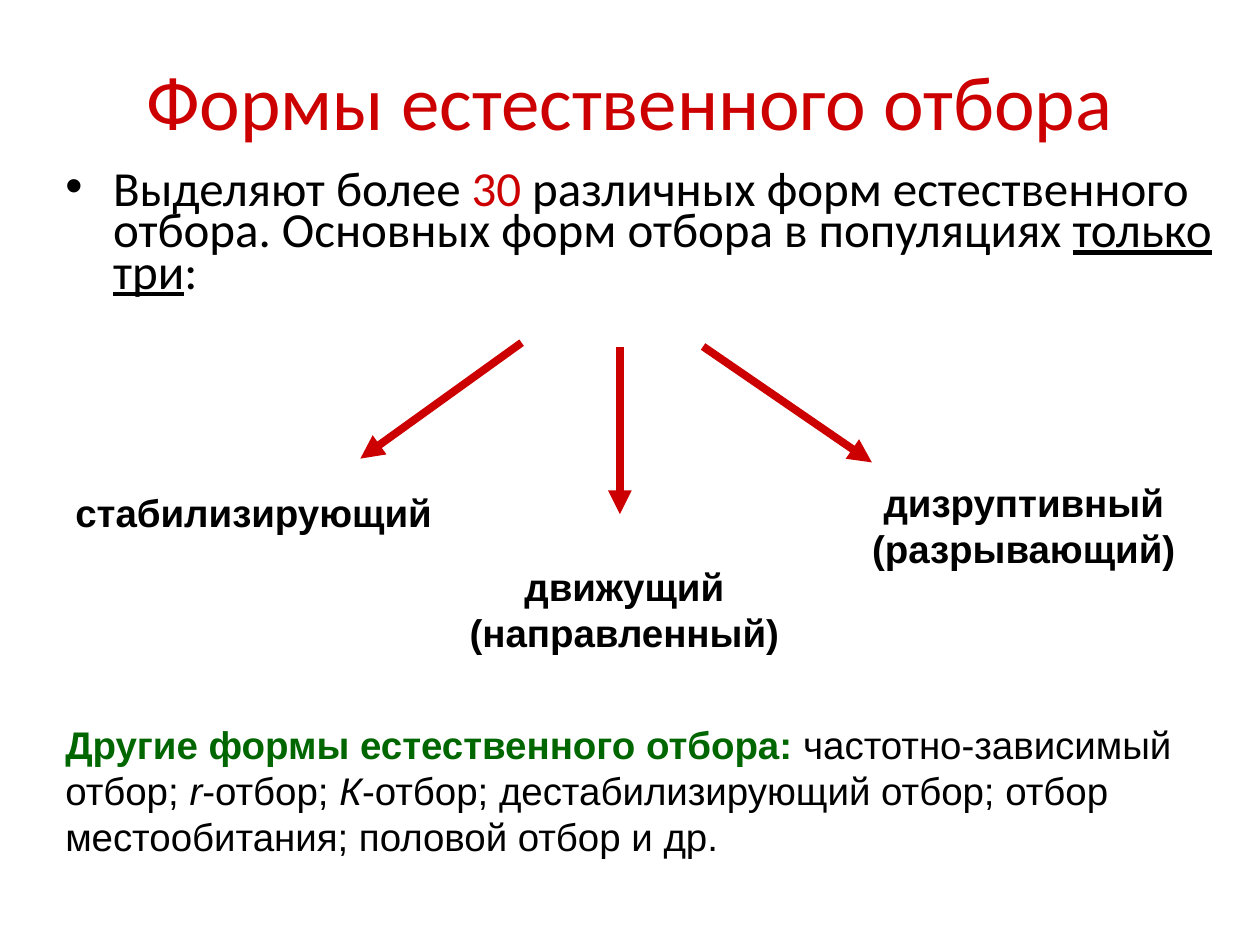
from lxml import etree
from pptx import Presentation
from pptx.dml.color import RGBColor
from pptx.enum.shapes import MSO_CONNECTOR
from pptx.enum.text import MSO_ANCHOR, PP_ALIGN
from pptx.oxml.ns import qn
from pptx.util import Inches, Pt

RED = RGBColor(0xCC, 0x00, 0x00)
GREEN = RGBColor(0x00, 0x66, 0x00)
BLACK = RGBColor(0x00, 0x00, 0x00)

# Runs are (text, font settings that differ from the base style)
TITLE = [("Формы естественного отбора", {})]
INTRO = [
    ("Выделяют более ", {}),
    ("30", {"color": RED}),
    (" различных форм естественного отбора. Основных форм отбора в популяциях ", {}),
    ("только три", {"underline": True}),
    (":", {}),
]
OTHER_FORMS = [
    ("Другие формы естественного отбора:", {"bold": True, "color": GREEN}),
    (" частотно-зависимый отбор; ", {}),
    ("r", {"italic": True}),
    ("-отбор; ", {}),
    ("К", {"italic": True}),
    ("-отбор; дестабилизирующий отбор; отбор местообитания; половой отбор и др.", {}),
]
# Label, its box, its alignment, arrow start, arrow end
MAIN_FORMS = [
    ("стабилизирующий", (0.5, 3.83, 3.08, 0.47), PP_ALIGN.LEFT, (4.14, 2.72), (2.86, 3.64)),
    ("движущий (направленный)", (3.58, 4.42, 2.75, 0.83), PP_ALIGN.CENTER,
     (4.92, 2.75), (4.92, 4.08)),
    ("дизруптивный (разрывающий)", (6.75, 3.75, 2.75, 0.83), PP_ALIGN.CENTER,
     (5.58, 2.75), (6.92, 3.67)),
]

TITLE_FONT = {"name": "Calibri", "size": Pt(44), "color": RED}
INTRO_FONT = {"name": "Calibri", "size": Pt(28), "color": BLACK}
NOTE_FONT = {"name": "Arial", "size": Pt(22), "color": BLACK}
LABEL_FONT = NOTE_FONT | {"bold": True}


def write_runs(paragraph, runs, base_font):
    for text, changes in runs:
        run = paragraph.add_run()
        run.text = text
        for attribute, value in (base_font | changes).items():
            if attribute == "color":
                run.font.color.rgb = value
            else:
                setattr(run.font, attribute, value)


def add_text(slide, box, runs, font, alignment=PP_ALIGN.LEFT):
    frame = slide.shapes.add_textbox(*map(Inches, box)).text_frame
    frame.word_wrap = True
    paragraph = frame.paragraphs[0]
    paragraph.alignment = alignment
    write_runs(paragraph, runs, font)
    return paragraph


def add_bullet(paragraph, indent):
    properties = paragraph._p.get_or_add_pPr()
    properties.set("marL", str(indent))
    properties.set("indent", str(-indent))
    etree.SubElement(properties, qn("a:buFont"), typeface="Arial")
    etree.SubElement(properties, qn("a:buChar"), char="•")


def add_arrow(slide, start, end):
    arrow = slide.shapes.add_connector(MSO_CONNECTOR.STRAIGHT, *map(Inches, start + end))
    arrow.line.color.rgb = RED
    arrow.line.width = Pt(4.5)
    etree.SubElement(arrow.line._get_or_add_ln(), qn("a:tailEnd"), type="triangle")
    etree.SubElement(arrow._element.spPr, qn("a:effectLst"))


def main():
    presentation = Presentation()
    presentation.slide_width, presentation.slide_height = Inches(10), Inches(7.5)
    slide = presentation.slides.add_slide(presentation.slide_layouts[5])

    title = slide.shapes.title
    title.left, title.top, title.width, title.height = map(Inches, (0.5, 0.17, 9, 1.25))
    title.text_frame.vertical_anchor = MSO_ANCHOR.MIDDLE
    heading = title.text_frame.paragraphs[0]
    heading.alignment = PP_ALIGN.CENTER
    write_runs(heading, TITLE, TITLE_FONT)

    intro = add_text(slide, (0.42, 1.33, 9.42, 1.17), INTRO, INTRO_FONT)
    add_bullet(intro, Inches(0.38))
    intro.line_spacing = 0.7

    for label, box, alignment, start, end in MAIN_FORMS:
        add_arrow(slide, start, end)
        add_text(slide, box, [(label, {})], LABEL_FONT, alignment)

    add_text(slide, (0.42, 5.67, 9.17, 1.2), OTHER_FORMS, NOTE_FONT)
    presentation.save("out.pptx")


if __name__ == "__main__":
    main()
